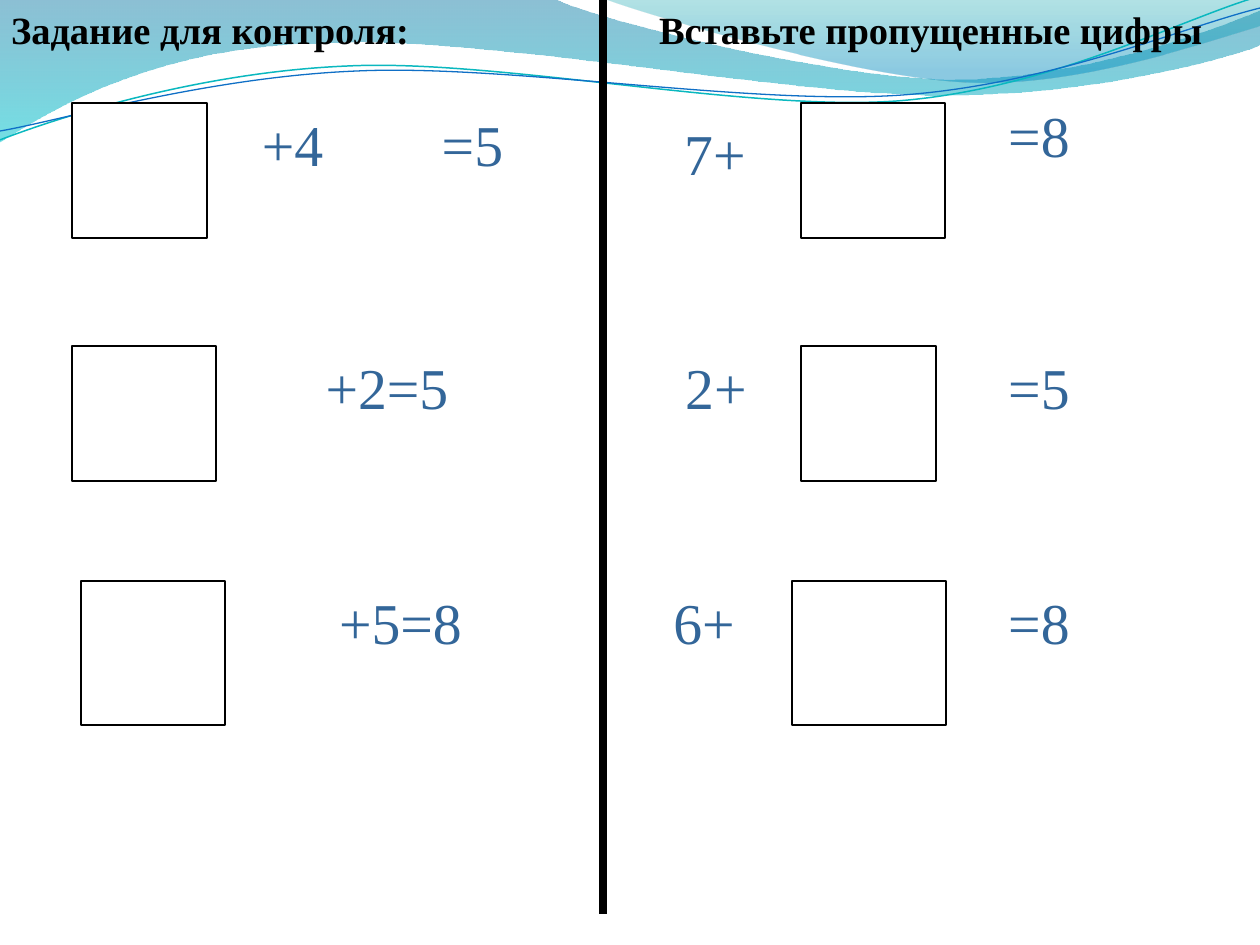
import math

from lxml import etree
from pptx import Presentation
from pptx import util as u
from pptx.dml.color import RGBColor
from pptx.enum import shapes, text
from pptx.oxml.ns import qn

PX = 914400 / 126
FONT = "Times New Roman"
TILT = -2.7
HEX = {
    "ink": "000000", "paper": "FFFFFF", "sum": "336699",
    "deep": "0074A1", "aqua": "00C6CF", "teal": "00A1A9", "sky": "008BBF",
    "line1": "0AB8BF", "line2": "0F6FC6",
}

# Each curve: start point, then segments of 1 (line) or 3 (Bezier) points
BACK = ((0, 0), [
    [(554, -1)],
    [(600, 21), (837, 79), (955, 79)],
    [(1075, 79), (1207, 33), (1260, 11)],
    [(1261, 45)],
    [(1239, 55), (1096, 96), (940, 95)],
    [(781, 95), (481, 35), (324, 43)],
    [(163, 45), (58, 105), (-1, 142)],
    [(0, 0)],
])
FRONT = ((604, -1), [
    [(641, 14), (859, 78), (969, 82)],
    [(1079, 87), (1211, 40), (1260, 26)],
    [(1260, 0)],
    [(604, -1)],
])
UPPER = ((0, 140), [
    [(60, 117), (199, 72), (349, 66)],
    [(498, 59), (747, 112), (898, 101)],
    [(1050, 89), (1182, 19), (1257, -3)],
])
LOWER = ((0, 131), [
    [(59, 121), (207, 77), (357, 71)],
    [(508, 64), (752, 106), (903, 95)],
    [(1053, 84), (1186, 26), (1260, 8)],
])

# Empty squares: left, top, width, height
BOXES = [
    (72, 103, 135, 135), (801, 103, 144, 135),
    (72, 346, 144, 135), (801, 346, 135, 135),
    (81, 581, 144, 144), (792, 581, 154, 144),
]
# Parts of the sums: wording, left, top, width
SUMS = [
    ("+4", 225, 103, 135), ("=5", 405, 103, 135),
    ("7+", 639, 112, 152), ("=8", 963, 94, 152),
    ("+2=5", 234, 346, 306), ("2+", 639, 346, 154), ("=5", 963, 346, 152),
    ("+5=8", 252, 581, 297), ("6+", 639, 581, 130), ("=8", 963, 581, 152),
]


def emu(*px):
    return [u.Emu(round(n * PX)) for n in px]


def rgb(name):
    return RGBColor.from_string(HEX[name])


def turn(point, mid, angle):
    """Turn a point clockwise about mid."""
    a = math.radians(angle)
    x, y = point[0] - mid[0], point[1] - mid[1]
    return (mid[0] + x * math.cos(a) - y * math.sin(a),
            mid[1] + x * math.sin(a) + y * math.cos(a))


def add_path(slide, curve, close, mid=(0, 0), angle=0):
    start, parts = curve
    pts = [start] + [p for part in parts for p in part]
    pts = [emu(*turn(p, mid, -angle)) for p in pts]
    pen = slide.shapes.build_freeform(*pts[0])
    pen.add_line_segments(pts[1:], close=close)
    shape = pen.convert_to_shape()
    shape.shadow.inherit = False
    shape.rotation = angle
    # Join three straight steps into one Bezier segment
    steps = iter(list(shape.element.spPr.iter(qn("a:lnTo"))))
    for part in parts:
        group = [next(steps) for _ in part]
        if len(group) == 3:
            bend = etree.Element(qn("a:cubicBezTo"))
            group[0].addprevious(bend)
            for step in group:
                bend.append(step[0])
                step.getparent().remove(step)
    return shape


def add_wave(slide, curve, stops):
    shape = add_path(slide, curve, True)
    shape.line.fill.background()
    shape.fill.gradient()
    shape.fill.gradient_angle = 270
    for stop, (pos, name, _) in zip(shape.fill.gradient_stops, stops):
        stop.position = pos
        stop.color.rgb = rgb(name)
    for clr, (_, _, alpha) in zip(shape.element.spPr.iter(qn("a:srgbClr")), stops):
        etree.SubElement(clr, qn("a:alpha"), val=str(alpha * 1000))


def add_curl(slide, curve, mid, name, width):
    shape = add_path(slide, curve, False, mid, TILT)
    shape.fill.background()
    shape.line.color.rgb = rgb(name)
    shape.line.width = u.Pt(width)


def add_box(slide, *place):
    box = slide.shapes.add_shape(shapes.MSO_SHAPE.RECTANGLE, *emu(*place))
    box.shadow.inherit = False
    box.fill.solid()
    box.fill.fore_color.rgb = rgb("paper")
    box.line.color.rgb = rgb("ink")
    box.line.width = u.Pt(0.75)


def add_rule(slide, *ends):
    rule = slide.shapes.add_connector(shapes.MSO_CONNECTOR.STRAIGHT, *emu(*ends))
    rule.line.color.rgb = rgb("ink")
    rule.line.width = u.Pt(4.5)
    etree.SubElement(rule.element.spPr, qn("a:effectLst"))


def add_text(slide, words, place, size, name, bold=False):
    frame = slide.shapes.add_textbox(*emu(*place)).text_frame
    frame.word_wrap = True
    para = frame.paragraphs[0]
    para.text = words
    font = para.font
    font.name, font.size, font.bold = FONT, u.Pt(size), bold
    font.color.rgb = rgb(name)
    return frame


def add_head(slide):
    words = "Задание для контроля:\tВставьте пропущенные цифры"
    frame = add_text(slide, words, (0, 0, 1240, 58), 22, "ink", True)
    frame.margin_left = emu(11)[0]
    frame.vertical_anchor = text.MSO_ANCHOR.MIDDLE
    # The tab stop starts the second title right of the rule
    props = frame.paragraphs[0].font._element.getparent()
    tabs = etree.Element(qn("a:tabLst"))
    etree.SubElement(tabs, qn("a:tab"), pos=str(emu(648)[0]), algn="l")
    props.insert(0, tabs)


def main():
    prs = Presentation()
    prs.slide_width, prs.slide_height = emu(1260, 945)
    slide = prs.slides.add_slide(prs.slide_layouts[6])

    # Wavy backdrop
    add_wave(slide, BACK, [(0, "deep", 45), (1, "aqua", 55)])
    add_wave(slide, FRONT, [(0, "teal", 30), (0.8, "sky", 45)])
    add_curl(slide, UPPER, (629, 72), "line1", 0.85)
    add_curl(slide, LOWER, (629, 74), "line2", 0.75)

    # Divider, squares and sums
    add_rule(slide, 603, 0, 603, 914)
    for place in BOXES:
        add_box(slide, *place)
    for words, left, top, width in SUMS:
        frame = add_text(slide, words, (left, top, width, 135), 33, "sum")
        frame.paragraphs[0].alignment = text.PP_ALIGN.CENTER

    add_head(slide)
    prs.save("out.pptx")


if __name__ == "__main__":
    main()
